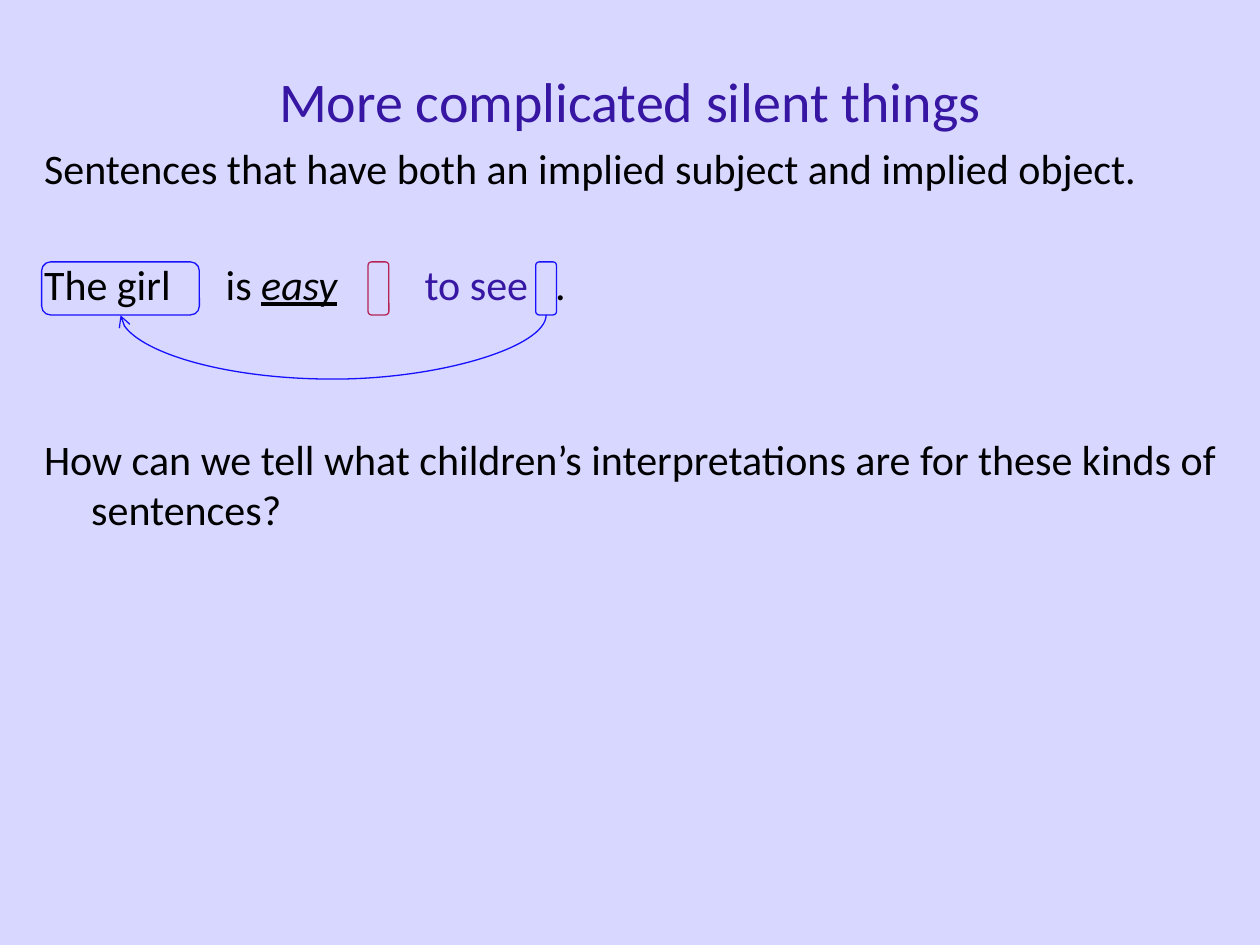
from dataclasses import dataclass

from lxml import etree
from pptx import Presentation
from pptx.dml.color import RGBColor
from pptx.enum.shapes import MSO_CONNECTOR, MSO_SHAPE
from pptx.enum.text import MSO_ANCHOR, PP_ALIGN
from pptx.oxml.ns import qn
from pptx.util import Cm, Emu, Pt

CURVE = MSO_CONNECTOR.CURVE
ROUNDED = MSO_SHAPE.ROUNDED_RECTANGLE
MIDDLE = MSO_ANCHOR.MIDDLE
CENTER = PP_ALIGN.CENTER
TITLE_ONLY = 5


@dataclass(frozen=True)
class Theme:
    font: str = "Calibri"
    title_size: int = 32
    body_size: int = 24
    line_width: float = 0.75
    background: str = "D7D7FF"
    text: str = "000000"
    accent: str = "3616A2"
    subject: str = "B52254"
    object: str = "1711FF"


THEME = Theme()


def add_span(para, text, color=THEME.text, size=THEME.body_size, emphasis=False):
    span = para.add_run()
    span.text = text
    font = span.font
    font.name, font.size = THEME.font, Pt(size)
    font.color.rgb = RGBColor.from_string(color)
    if emphasis:
        font.italic = font.underline = True


def set_indent(para, hanging):
    props = para._p.get_or_add_pPr()
    props.set("marL", str(hanging))
    props.set("indent", str(-hanging))


def set_tabs(para, stops):
    tabs = etree.SubElement(para._p.get_or_add_pPr(), qn("a:tabLst"))
    for stop in stops:
        etree.SubElement(tabs, qn("a:tab"), pos=str(stop), algn="l")


def add_text_box(page, left, top, width, height):
    frame = page.shapes.add_textbox(left, top, width, height).text_frame
    frame.word_wrap = True
    return frame


def place_title(page, left, top, width, height):
    title = page.shapes.title
    title.left, title.top, title.width, title.height = left, top, width, height
    title.text_frame.vertical_anchor = MIDDLE
    para = title.text_frame.paragraphs[0]
    para.alignment = CENTER
    add_span(para, "More complicated silent things", THEME.accent, THEME.title_size)


def place_intro(page, left, top, width, height):
    para = add_text_box(page, left, top, width, height).paragraphs[0]
    set_indent(para, Cm(0.95))
    add_span(para, "Sentences that have both an implied subject and implied object.")


def add_marker(page, left, top, width, height, color):
    marker = page.shapes.add_shape(ROUNDED, left, top, width, height)
    marker.shadow.inherit = False
    marker.fill.background()
    marker.line.color.rgb = RGBColor.from_string(color)
    marker.line.width = Pt(THEME.line_width)
    return marker


def add_reference_arrow(page, source, target, depth):
    """Curve from the bottom of source, dipping by depth, to the bottom of target."""
    start = source.left + source.width // 2
    end = target.left + target.width // 2
    span, thickness = start - end, Emu(3175)
    middle, level = (start + end) // 2, source.top + source.height
    # A tall, thin connector, turned a quarter so that it bulges downwards
    left, top = middle - thickness // 2, level - span // 2
    arrow = page.shapes.add_connector(CURVE, left, top, left + thickness, top + span)
    arrow.line.color.rgb = RGBColor.from_string(THEME.object)
    arrow.line.width = Pt(THEME.line_width)
    props = arrow._element.spPr
    props.find(qn("a:xfrm")).set("rot", str(90 * 60000))
    guides = props.find(qn("a:prstGeom")).find(qn("a:avLst"))
    bulge = round(depth / thickness * 100000)
    etree.SubElement(guides, qn("a:gd"), name="adj1", fmla=f"val {bulge}")
    etree.SubElement(props.find(qn("a:ln")), qn("a:tailEnd"), type="arrow")
    etree.SubElement(props, qn("a:effectLst"))


def place_example(page, left, top, width, height):
    # Example sentence, with tab stops that leave room for the silent parts
    frame = add_text_box(page, left, top, width, height)
    sentence = frame.paragraphs[0]
    set_tabs(sentence, [Cm(3.66), Cm(7.67), Cm(10.3)])
    add_span(sentence, "The girl\tis ")
    add_span(sentence, "easy", emphasis=True)
    add_span(sentence, "\t")
    add_span(sentence, "to see", THEME.accent)
    add_span(sentence, "\t.")

    # Question
    question = frame.add_paragraph()
    set_indent(question, Cm(0.95))
    question.space_before = Pt(71.3)
    add_span(question, "How can we tell what children’s interpretations are "
                       "for these kinds of sentences?")

    # Markers around the spoken and silent parts
    markers = [
        add_marker(page, left + Cm(offset), top + Cm(0.2), Cm(size), Cm(1.07), color)
        for offset, size, color in [
            (6.78, 0.42, THEME.subject),
            (10.16, 0.42, THEME.object),
            (0.2, 3.18, THEME.object),
        ]
    ]
    add_reference_arrow(page, markers[1], markers[2], Cm(1.27))


def main():
    deck = Presentation()
    deck.slide_width, deck.slide_height = Cm(25.4), Cm(19.05)
    page = deck.slides.add_slide(deck.slide_layouts[TITLE_ONLY])
    fill = page.background.fill
    fill.solid()
    fill.fore_color.rgb = RGBColor.from_string(THEME.background)

    place_title(page, Cm(1.91), Cm(0.43), Cm(21.59), Cm(3.18))
    place_intro(page, Cm(0.64), Cm(2.74), Cm(24.77), Cm(4.65))
    place_example(page, Cm(0.64), Cm(5.08), Cm(24.77), Cm(10.36))
    deck.save("out.pptx")


if __name__ == "__main__":
    main()
